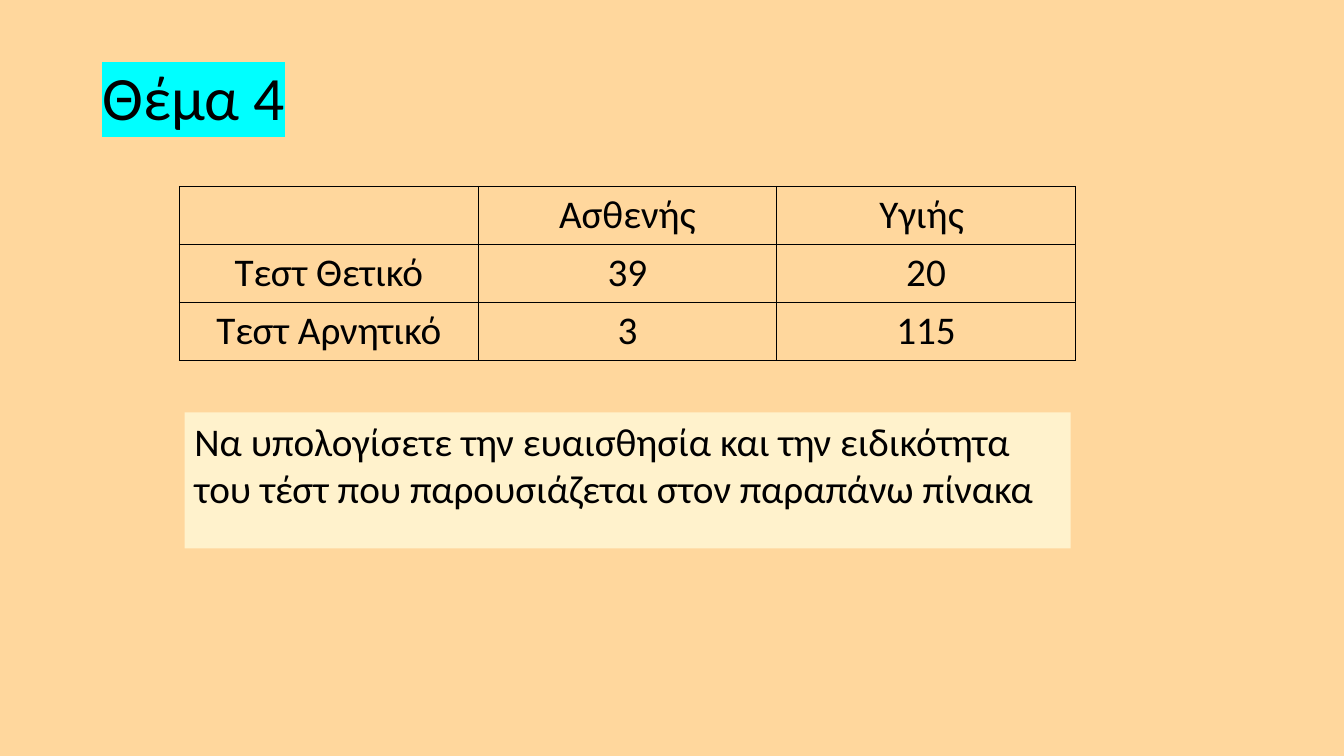
from lxml.etree import SubElement
from pptx import Presentation
from pptx.dml.color import RGBColor
from pptx.enum.shapes import MSO_SHAPE
from pptx.enum.text import MSO_ANCHOR, PP_ALIGN
from pptx.oxml.ns import qn
from pptx.util import Pt

COLORS = {
    "background": "FFD79D",
    "text": "000000",
    "border": "000000",
    "highlight": "00FFFF",
    "question": "FFF2CC",
}
FONT = "Calibri"
RESULTS = [
    ["", "Ασθενής", "Υγιής "],
    ["Τεστ Θετικό", "39", "20"],
    ["Τεστ Αρνητικό", "3", "115"],
]
QUESTION = ("Να υπολογίσετε την ευαισθησία και την ειδικότητα "
            "του τέστ που παρουσιάζεται στον παραπάνω πίνακα")


def color(name):
    return RGBColor.from_string(COLORS[name])


def write(frame, text, size, align=PP_ALIGN.LEFT):
    """Fill the frame's first paragraph and return its run."""
    frame.word_wrap = True
    para = frame.paragraphs[0]
    para.alignment = align
    span = para.add_run()
    span.text = text
    span.font.color.rgb = color("text")
    for name, value in {"name": FONT, "size": Pt(size), "bold": False}.items():
        setattr(span.font, name, value)
    return span


def highlight(span, name):
    properties = span.font._element
    mark = SubElement(properties, qn("a:highlight"))
    SubElement(mark, qn("a:srgbClr"), val=COLORS[name])
    properties.find(qn("a:solidFill")).addnext(mark)


def add_title(page, text, left, top, width, height):
    box = page.shapes.add_textbox(Pt(left), Pt(top), Pt(width), Pt(height))
    box.text_frame.vertical_anchor = MSO_ANCHOR.MIDDLE
    span = write(box.text_frame, text, 44)
    box.text_frame.paragraphs[0].line_spacing = 0.9
    highlight(span, "highlight")


def add_borders(cell, width):
    properties = cell._tc.get_or_add_tcPr()
    for position, side in enumerate(("lnL", "lnR", "lnT", "lnB")):
        line = SubElement(properties, qn(f"a:{side}"), w=str(Pt(width)))
        fill = SubElement(line, qn("a:solidFill"))
        SubElement(fill, qn("a:srgbClr"), val=COLORS["border"])
        properties.insert(position, line)


def add_results(page, rows, left, top, width, height):
    frame = page.shapes.add_table(len(rows), len(rows[0]), Pt(left), Pt(top),
                                  Pt(width), Pt(height))
    table = frame.table
    table.first_row = table.horz_banding = False
    for column in table.columns:
        column.width = Pt(width / len(rows[0]))
    for row, texts in zip(table.rows, rows):
        row.height = Pt(height / len(rows))
        for cell, text in zip(row.cells, texts):
            cell.fill.background()
            add_borders(cell, 1)
            if text:
                write(cell.text_frame, text, 28, PP_ALIGN.CENTER)


def add_question(page, text, left, top, width, height):
    box = page.shapes.add_shape(MSO_SHAPE.RECTANGLE, Pt(left), Pt(top),
                                Pt(width), Pt(height))
    box.shadow.inherit = False
    box.fill.solid()
    box.fill.fore_color.rgb = color("question")
    box.line.fill.background()
    box.text_frame.vertical_anchor = MSO_ANCHOR.TOP
    write(box.text_frame, text, 28)


def main():
    deck = Presentation()
    deck.slide_width, deck.slide_height = Pt(960), Pt(540)
    page = deck.slides.add_slide(deck.slide_layouts[6])
    page.background.fill.solid()
    page.background.fill.fore_color.rgb = color("background")
    add_title(page, "Θέμα 4", 66, 28.8, 152.6, 85.7)
    add_results(page, RESULTS, 128.2, 133.2, 640, 124.2)
    add_question(page, QUESTION, 131.8, 294.5, 632.9, 97.2)
    deck.save("out.pptx")


if __name__ == "__main__":
    main()
